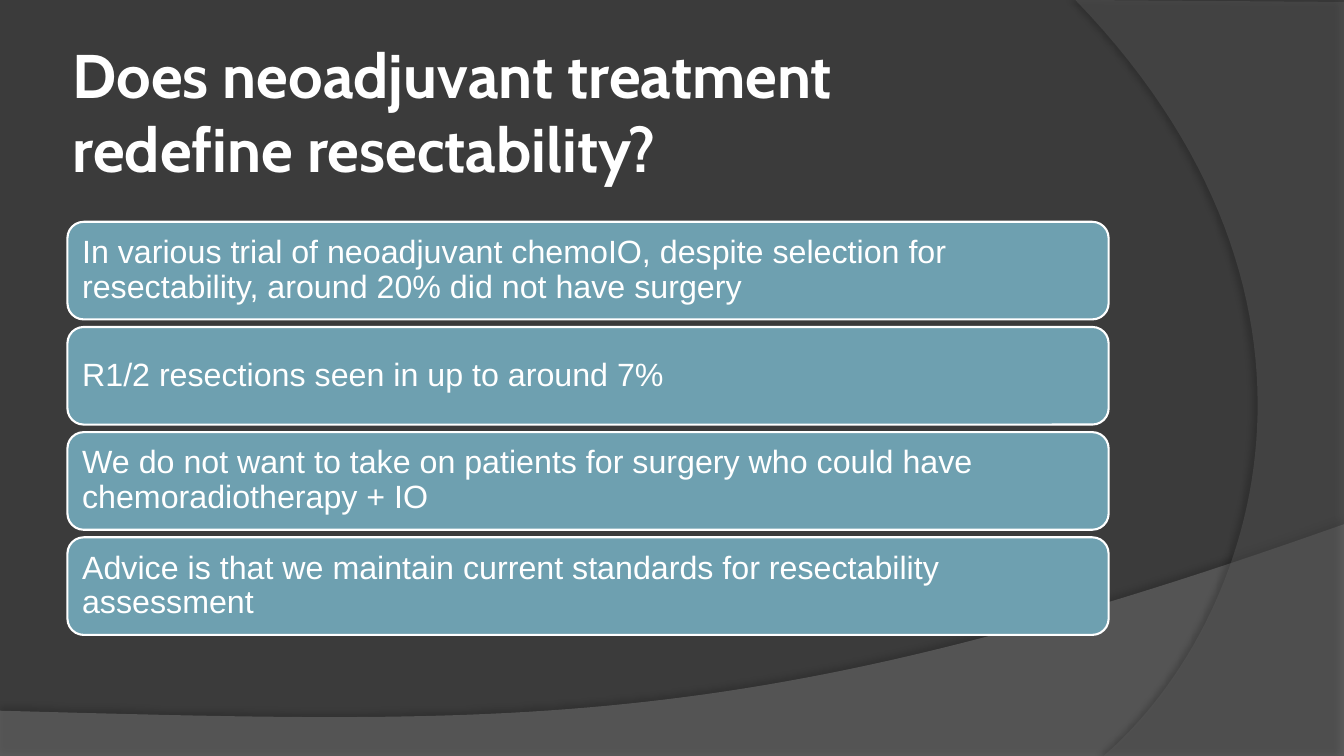
from dataclasses import dataclass

from lxml.etree import SubElement
from pptx import Presentation
from pptx.dml.color import RGBColor
from pptx.enum.shapes import MSO_SHAPE
from pptx.enum.text import MSO_ANCHOR, MSO_AUTO_SIZE, PP_ALIGN
from pptx.oxml.ns import qn
from pptx.slide import Slide
from pptx.util import Cm, Pt

Point = tuple[float, float]

SLIDE_WIDTH, SLIDE_HEIGHT = 33.87, 19.05
LEFT = 1.7
WHITE = "FFFFFF"
CURVE_STEPS = 60

TITLE = "Does neoadjuvant treatment redefine resectability?"
STATEMENTS = [
    "In various trial of neoadjuvant chemoIO, despite selection for "
    "resectability, around 20% did not have surgery",
    "R1/2 resections seen in up to around 7%",
    "We do not want to take on patients for surgery who could have "
    "chemoradiotherapy + IO",
    "Advice is that we maintain current standards for resectability assessment",
]
BOX_TOP, BOX_PITCH = 5.59, 2.65
BOX_WIDTH, BOX_HEIGHT = 26.24, 2.46


@dataclass(frozen=True)
class Swoosh:
    """Straight corners in cm, closed by a cubic curve from the last corner."""
    corners: list[Point]
    control_a: Point
    control_b: Point
    end: Point
    color: str
    opacity: int
    shadow_opacity: int
    shadow_distance: float
    shadow_angle: int


SWOOSHES = [
    Swoosh([(0, 17.91), (0, SLIDE_HEIGHT), (SLIDE_WIDTH, SLIDE_HEIGHT),
            (SLIDE_WIDTH, 13.21)],
           (18.92, 18.52), (13.23, 18.26), (0, 17.91), "7F7F7F", 45, 35, 3.5, 270),
    Swoosh([(SLIDE_WIDTH, 0.05), (SLIDE_WIDTH, SLIDE_HEIGHT), (27.81, SLIDE_HEIGHT)],
           (31.65, 15.72), (34.47, 7.62), (27.1, 0), "5E5E5E", 40, 45, 4, 180),
]


def rgb(color: str) -> RGBColor:
    return RGBColor.from_string(color)


def curve_points(swoosh: Swoosh) -> list[Point]:
    start = swoosh.corners[-1]
    points = []
    for step in range(1, CURVE_STEPS + 1):
        t = step / CURVE_STEPS
        weights = ((1 - t) ** 3, 3 * t * (1 - t) ** 2, 3 * t * t * (1 - t), t ** 3)
        anchors = (start, swoosh.control_a, swoosh.control_b, swoosh.end)
        points.append((sum(w * x for w, (x, _) in zip(weights, anchors)),
                       sum(w * y for w, (_, y) in zip(weights, anchors))))
    return points


def add_swoosh(page: Slide, swoosh: Swoosh) -> None:
    outline = [(Cm(x), Cm(y)) for x, y in swoosh.corners + curve_points(swoosh)]
    builder = page.shapes.build_freeform(*outline[0])
    builder.add_line_segments(outline[1:], close=True)
    shape = builder.convert_to_shape()
    shape.line.fill.background()
    shape.fill.solid()
    shape.fill.fore_color.rgb = rgb(swoosh.color)
    shape.shadow.inherit = False

    properties = shape._element.spPr
    fill_color = properties.find(qn("a:solidFill")).find(qn("a:srgbClr"))
    SubElement(fill_color, qn("a:alpha"), val=str(swoosh.opacity * 1000))
    shadow = SubElement(properties.find(qn("a:effectLst")), qn("a:outerShdw"),
                        blurRad=str(Pt(4)), dist=str(Pt(swoosh.shadow_distance)),
                        dir=str(swoosh.shadow_angle * 60000), rotWithShape="0")
    shadow_color = SubElement(shadow, qn("a:srgbClr"), val="000000")
    SubElement(shadow_color, qn("a:alpha"), val=str(swoosh.shadow_opacity * 1000))


def fill_title(page: Slide) -> None:
    title = page.shapes.title
    title.left, title.top, title.width, title.height = (
        Cm(LEFT), Cm(0.94), Cm(25.17), Cm(3.8))
    frame = title.text_frame
    frame.text = TITLE
    frame.word_wrap = True
    frame.auto_size = MSO_AUTO_SIZE.NONE
    frame.vertical_anchor = MSO_ANCHOR.TOP
    frame.margin_left = frame.margin_right = Cm(0.13)
    frame.margin_top = frame.margin_bottom = 0
    para = frame.paragraphs[0]
    para.alignment = PP_ALIGN.LEFT
    para.font.name, para.font.size, para.font.bold = "Cabin", Pt(44), True
    para.font.color.rgb = rgb(WHITE)


def add_statement(page: Slide, text: str, top: float) -> None:
    box = page.shapes.add_shape(MSO_SHAPE.ROUNDED_RECTANGLE, Cm(LEFT), Cm(top),
                                Cm(BOX_WIDTH), Cm(BOX_HEIGHT))
    box.shadow.inherit = False
    box.fill.solid()
    box.fill.fore_color.rgb = rgb("6EA0B0")
    box.line.color.rgb = rgb(WHITE)
    box.line.width = Pt(1.5)
    frame = box.text_frame
    frame.text = text
    frame.word_wrap = True
    frame.vertical_anchor = MSO_ANCHOR.MIDDLE
    frame.margin_left = frame.margin_right = Cm(0.25)
    frame.margin_top = frame.margin_bottom = Cm(0.25)
    para = frame.paragraphs[0]
    para.alignment = PP_ALIGN.LEFT
    para.line_spacing = 0.9
    para.font.name, para.font.size = "Arial", Pt(23)
    para.font.color.rgb = rgb(WHITE)


def main() -> None:
    deck = Presentation()
    deck.slide_width, deck.slide_height = Cm(SLIDE_WIDTH), Cm(SLIDE_HEIGHT)
    page = deck.slides.add_slide(deck.slide_layouts.get_by_name("Title Only"))
    page.background.fill.solid()
    page.background.fill.fore_color.rgb = rgb("3B3B3B")
    for swoosh in SWOOSHES:
        add_swoosh(page, swoosh)
    fill_title(page)
    for index, text in enumerate(STATEMENTS):
        add_statement(page, text, BOX_TOP + index * BOX_PITCH)
    deck.save("out.pptx")


if __name__ == "__main__":
    main()
